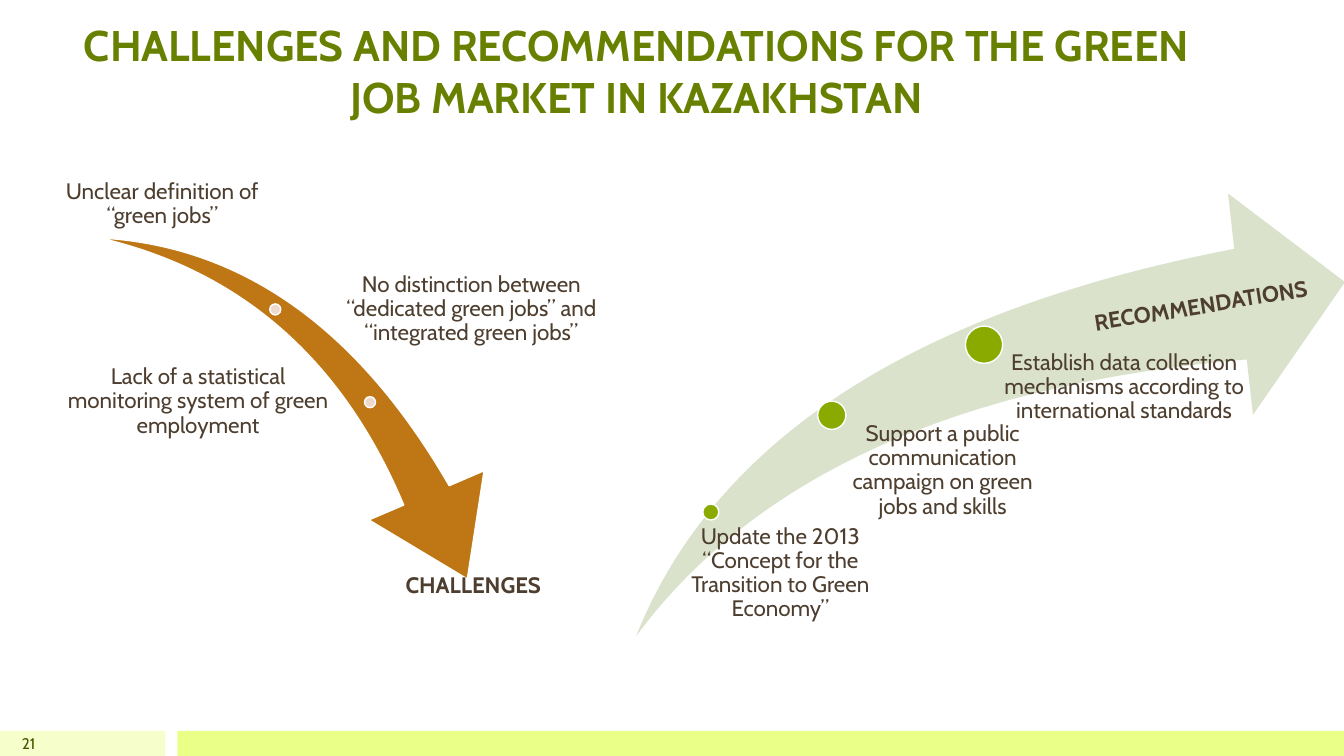
from pptx import Presentation, util as u
from pptx.dml.color import RGBColor
from pptx.enum import shapes, text

COLUMNS, ROWS = 13.33, 7.5
FONT = "Cabin"
BROWN, GREEN, ORANGE, SAGE, BEIGE = "4D3E2F", "8BAA00", "BE7714", "DAE2CC", "EED9CC"

TITLE = "CHALLENGES AND RECOMMENDATIONS FOR THE GREEN JOB MARKET IN KAZAKHSTAN"
FOOTER_TOP, FOOTER_HEIGHT = 7.25, 0.25
FOOTER_BANDS = [(0, 1.64, "F6FFCC"), (1.76, 11.57, "E9FF88")]

CHALLENGES = [
    ("Unclear definition of “green jobs”", (0.6, 1.5, 2.02, 0.79), "BOTTOM", False),
    ("No distinction between “dedicated green jobs” and “integrated green jobs”",
     (3.28, 2.67, 2.79, 0.79), "MIDDLE", False),
    ("Lack of a statistical monitoring system of green employment",
     (0.6, 3.59, 2.73, 0.79), "MIDDLE", False),
    ("CHALLENGES", (3.33, 5.68, 2.73, 0.79), "TOP", True),
]
CHALLENGE_DOTS = [(2.73, 3.07), (3.67, 3.99)]
CHALLENGE_DOT_SIZE = 0.11

RECOMMENDATIONS = [
    ("Update the 2013 “Concept for the Transition to Green Economy”",
     (7.05, 5.08), 0.16, (6.67, 5.21, 2.05, 1.05), 0.09),
    ("Support a public communication campaign on green jobs and skills",
     (8.25, 4.12), 0.28, (8.23, 4.19, 2.09, 0.86), 0.15),
    ("Establish data collection mechanisms according to international standards",
     (9.76, 3.42), 0.37, (9.7, 3.48, 2.7, 1.16), 0.2),
]

presentation = Presentation()
presentation.slide_width = u.Inches(COLUMNS)
presentation.slide_height = u.Inches(ROWS)
slide = presentation.slides.add_slide(presentation.slide_layouts[6])


def color(value):
    return RGBColor.from_string(value)


def place(box):
    return [u.Inches(length) for length in box]


def add_shape(kind, box, fill, outlined=False):
    shape = slide.shapes.add_shape(kind, *place(box))
    shape.shadow.inherit = False
    shape.fill.solid()
    shape.fill.fore_color.rgb = color(fill)
    if outlined:
        shape.line.color.rgb = color("FFFFFF")
        shape.line.width = u.Pt(1)
    else:
        shape.line.fill.background()
    return shape


def add_dot(center, size, fill):
    left, top = (middle - size / 2 for middle in center)
    add_shape(shapes.MSO_SHAPE.OVAL, (left, top, size, size), fill, True)


def add_arrow(box, fill, adjustments, outlined=False):
    arrow = add_shape(shapes.MSO_SHAPE.SWOOSH_ARROW, box, fill, outlined)
    for index, value in enumerate(adjustments):
        arrow.adjustments[index] = value
    return arrow


def add_text(words, box, insets, size=16, fill=BROWN, bold=False,
             anchor="TOP", align="CENTER", spacing=0.9):
    shape = slide.shapes.add_textbox(*place(box))
    frame = shape.text_frame
    frame.text = words
    frame.word_wrap = True
    frame.vertical_anchor = text.MSO_ANCHOR[anchor]
    (frame.margin_left, frame.margin_top,
     frame.margin_right, frame.margin_bottom) = place(insets)
    paragraph = frame.paragraphs[0]
    paragraph.alignment = text.PP_ALIGN[align]
    paragraph.line_spacing = spacing
    font = paragraph.runs[0].font
    font.name, font.size, font.bold = FONT, u.Pt(size), bold
    font.color.rgb = color(fill)
    return shape


for left, width, fill in FOOTER_BANDS:
    add_shape(shapes.MSO_SHAPE.RECTANGLE, (left, FOOTER_TOP, width, FOOTER_HEIGHT), fill)

standard_insets = (0.1, 0.05, 0.1, 0.05)
add_text(TITLE, (0.45, 0.33, 11.72, 0.93), standard_insets, 30.6, "688000", True,
         "BOTTOM", spacing=1.0)
add_text("21", (0, FOOTER_TOP, 0.45, FOOTER_HEIGHT), standard_insets, 11, "455500",
         anchor="MIDDLE", align="RIGHT", spacing=1.0)

challenge_arrow = add_arrow((0.89, 2.49, 4.29, 2.99), ORANGE, (0.163, 0.314), True)
challenge_arrow.rotation = 73.3
for center in CHALLENGE_DOTS:
    add_dot(center, CHALLENGE_DOT_SIZE, BEIGE)
for words, box, anchor, bold in CHALLENGES:
    add_text(words, box, (0.02,) * 4, bold=bold, anchor=anchor)

add_arrow((6.31, 1.92, 7.03, 4.39), SAGE, (0.25, 0.25))
for words, center, size, box, inset in RECOMMENDATIONS:
    add_dot(center, size, GREEN)
    add_text(words, box, (inset, 0, 0, 0))
recommendation_label = add_text("RECOMMENDATIONS", (10.6, 2.94, 2.43, 0.42),
                                (0.26, 0, 0, 0), bold=True, align="LEFT")
recommendation_label.rotation = 350.8

presentation.save("out.pptx")
